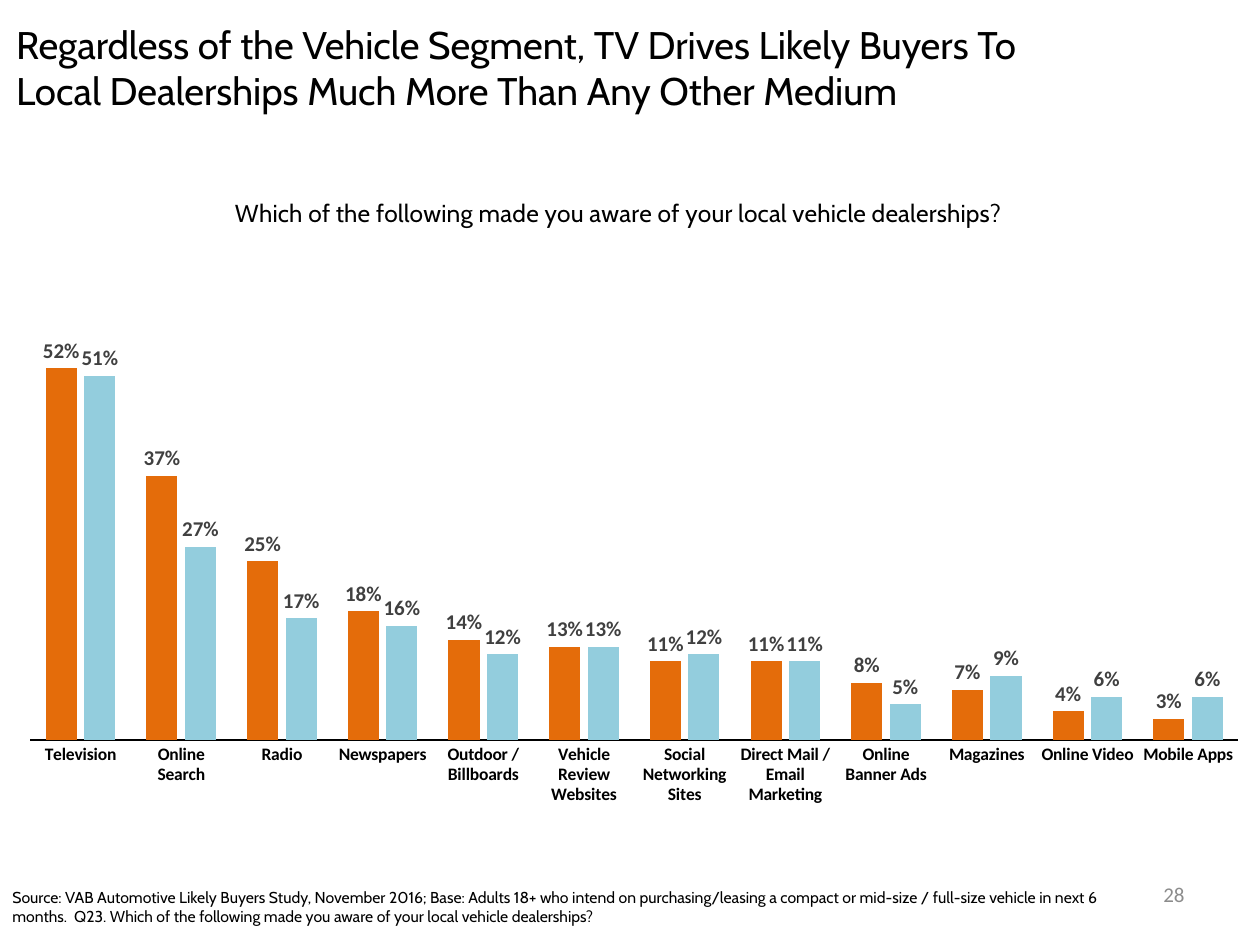
from lxml import etree
from pptx import Presentation
from pptx.chart.data import CategoryChartData
from pptx.dml.color import RGBColor
from pptx.enum.chart import XL_CHART_TYPE, XL_LABEL_POSITION, XL_TICK_LABEL_POSITION, XL_TICK_MARK
from pptx.enum.text import MSO_ANCHOR, PP_ALIGN
from pptx.oxml.ns import qn
from pptx.util import Inches, Pt

CLUSTERED = XL_CHART_TYPE.COLUMN_CLUSTERED
OUTSIDE_END = XL_LABEL_POSITION.OUTSIDE_END
NO_LABELS = XL_TICK_LABEL_POSITION.NONE
NO_TICKS = XL_TICK_MARK.NONE
TOP, MIDDLE = MSO_ANCHOR.TOP, MSO_ANCHOR.MIDDLE
LEFT, RIGHT = PP_ALIGN.LEFT, PP_ALIGN.RIGHT

BLACK = "000000"
HEADLINE = ("Regardless of the Vehicle Segment, TV Drives Likely Buyers To "
            "Local Dealerships Much More Than Any Other Medium")
QUESTION = "Which of the following made you aware of your local vehicle dealerships?"
SOURCE = ("Source: VAB Automotive Likely Buyers Study, November 2016; Base: Adults 18+ who "
          "intend on purchasing/leasing a compact or mid-size / full-size vehicle in next 6 "
          "months.  Q23. " + QUESTION)
MEDIA = ["Television", "Online Search", "Radio", "Newspapers", "Outdoor / Billboards",
         "Vehicle Review Websites", "Social Networking Sites",
         "Direct Mail / Email Marketing", "Online Banner Ads", "Magazines",
         "Online Video", "Mobile Apps"]
BUYERS = [
    ("Compact Car Buyer", "E46C0A",
     [0.52, 0.37, 0.25, 0.18, 0.14, 0.13, 0.11, 0.11, 0.08, 0.07, 0.04, 0.03]),
    ("Mid-Size / Full-Size Car Buyer", "93CDDD",
     [0.51, 0.27, 0.17, 0.16, 0.12, 0.13, 0.12, 0.11, 0.05, 0.09, 0.06, 0.06]),
]


def color(hex_string):
    return RGBColor.from_string(hex_string)


def style_font(font, name, size, hex_string=BLACK, bold=False):
    font.name = name
    font.size = Pt(size)
    font.bold = bold
    font.color.rgb = color(hex_string)


def add_text(slide, box, text, name, size, hex_string=BLACK, align=LEFT, anchor=TOP):
    text_frame = slide.shapes.add_textbox(*map(Inches, box)).text_frame
    text_frame.word_wrap = True
    text_frame.vertical_anchor = anchor
    text_frame.text = text
    paragraph = text_frame.paragraphs[0]
    paragraph.alignment = align
    style_font(paragraph.runs[0].font, name, size, hex_string)


def set_layout(element, index, **settings):
    """Place a chart part by hand, in fractions of the chart's size."""
    for old_layout in element.findall(qn("c:layout")):
        element.remove(old_layout)
    layout = etree.Element(qn("c:layout"))
    manual = etree.SubElement(layout, qn("c:manualLayout"))
    for tag, value in settings.items():
        etree.SubElement(manual, qn("c:" + tag)).set("val", str(value))
    element.insert(index, layout)


def add_awareness_chart(slide, box):
    chart_data = CategoryChartData(number_format="0%")
    chart_data.categories = MEDIA
    for name, _, values in BUYERS:
        chart_data.add_series(name, values)
    chart = slide.shapes.add_chart(CLUSTERED, *map(Inches, box), chart_data).chart
    chart.has_legend = False
    style_font(chart.font, "Calibri", 10)

    title_frame = chart.chart_title.text_frame
    title_frame.text = QUESTION
    style_font(title_frame.paragraphs[0].runs[0].font, "Cabin", 14)
    title = title_frame.paragraphs[0]._p.getparent().getparent().getparent()
    set_layout(title, 1, xMode="edge", yMode="edge", x=0.18, y=0.05)

    plot = chart.plots[0]
    plot.gap_width = 100
    plot.overlap = -24
    plot.vary_by_categories = False
    set_layout(chart._chartSpace.chart.plotArea, 0, layoutTarget="inner", xMode="edge",
               yMode="edge", x=0.021, y=0.232, w=0.959, h=0.652)

    for series, (_, fill, _) in zip(plot.series, BUYERS):
        series.format.fill.solid()
        series.format.fill.fore_color.rgb = color(fill)
        labels = series.data_labels
        labels.show_value = True
        labels.number_format = "0%"
        labels.number_format_is_linked = False
        labels.position = OUTSIDE_END
        style_font(labels.font, "Calibri", 12, "404040", bold=True)

    category_axis = chart.category_axis
    category_axis.major_tick_mark = NO_TICKS
    category_axis.format.line.color.rgb = color(BLACK)
    category_axis.format.line.width = Pt(1)
    style_font(category_axis.tick_labels.font, "Calibri", 10, bold=True)

    value_axis = chart.value_axis
    value_axis.minimum_scale = 0
    value_axis.maximum_scale = 0.6
    value_axis.has_major_gridlines = False
    value_axis.tick_label_position = NO_LABELS
    value_axis.visible = False


def main():
    presentation = Presentation()
    presentation.slide_width = Inches(10)
    presentation.slide_height = Inches(7.5)
    slide = presentation.slides.add_slide(presentation.slide_layouts[6])
    add_awareness_chart(slide, (0.03, 1.26, 10, 5.22))
    add_text(slide, (0, 7, 9.06, 0.4), SOURCE, "Cabin", 9)
    add_text(slide, (0.03, 0.09, 8.54, 0.88), HEADLINE, "Cabin", 22, anchor=MIDDLE)
    add_text(slide, (7.17, 6.95, 2.33, 0.4), "28", "Calibri", 12, "8C8C8C", align=RIGHT)
    presentation.save("out.pptx")


if __name__ == "__main__":
    main()
